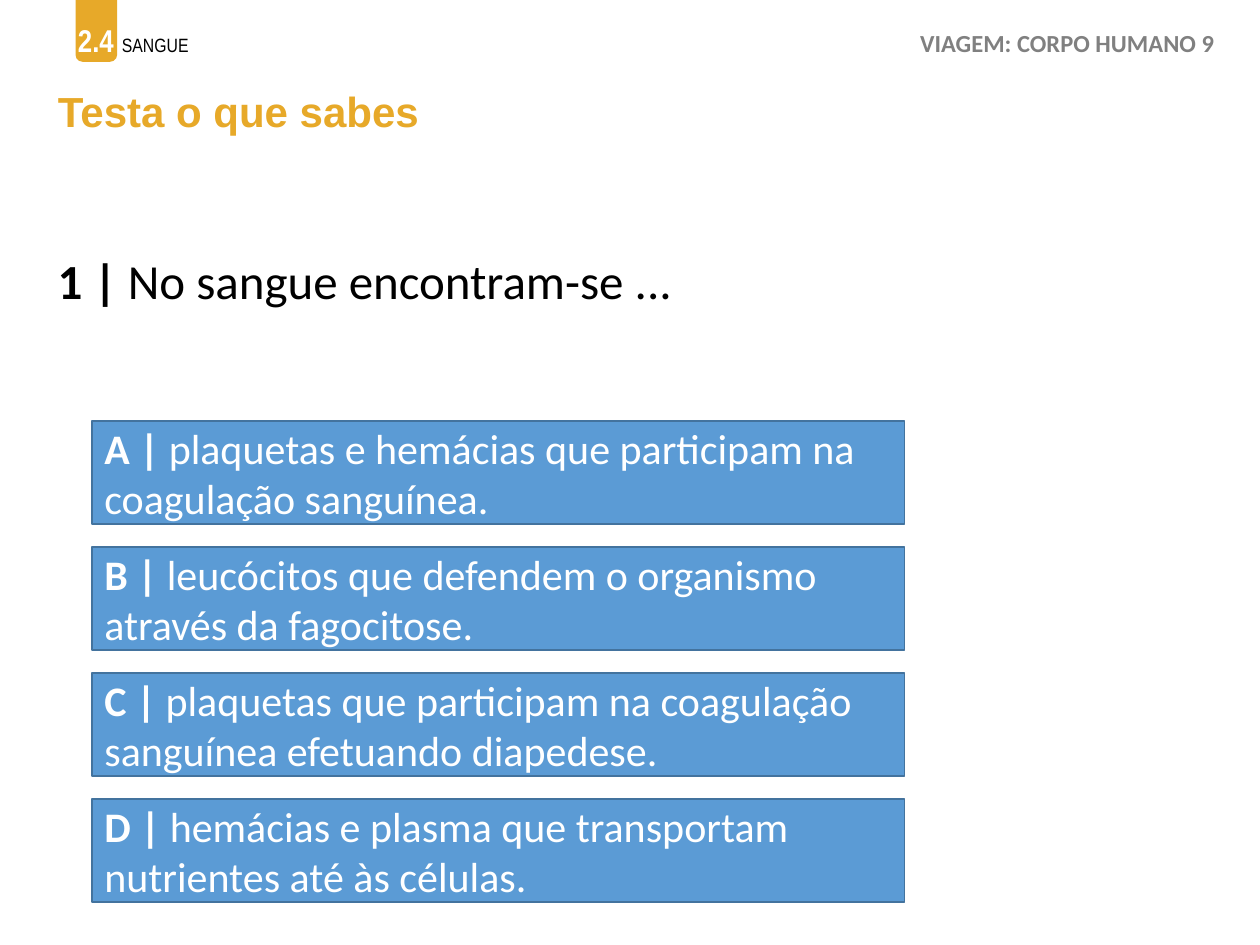
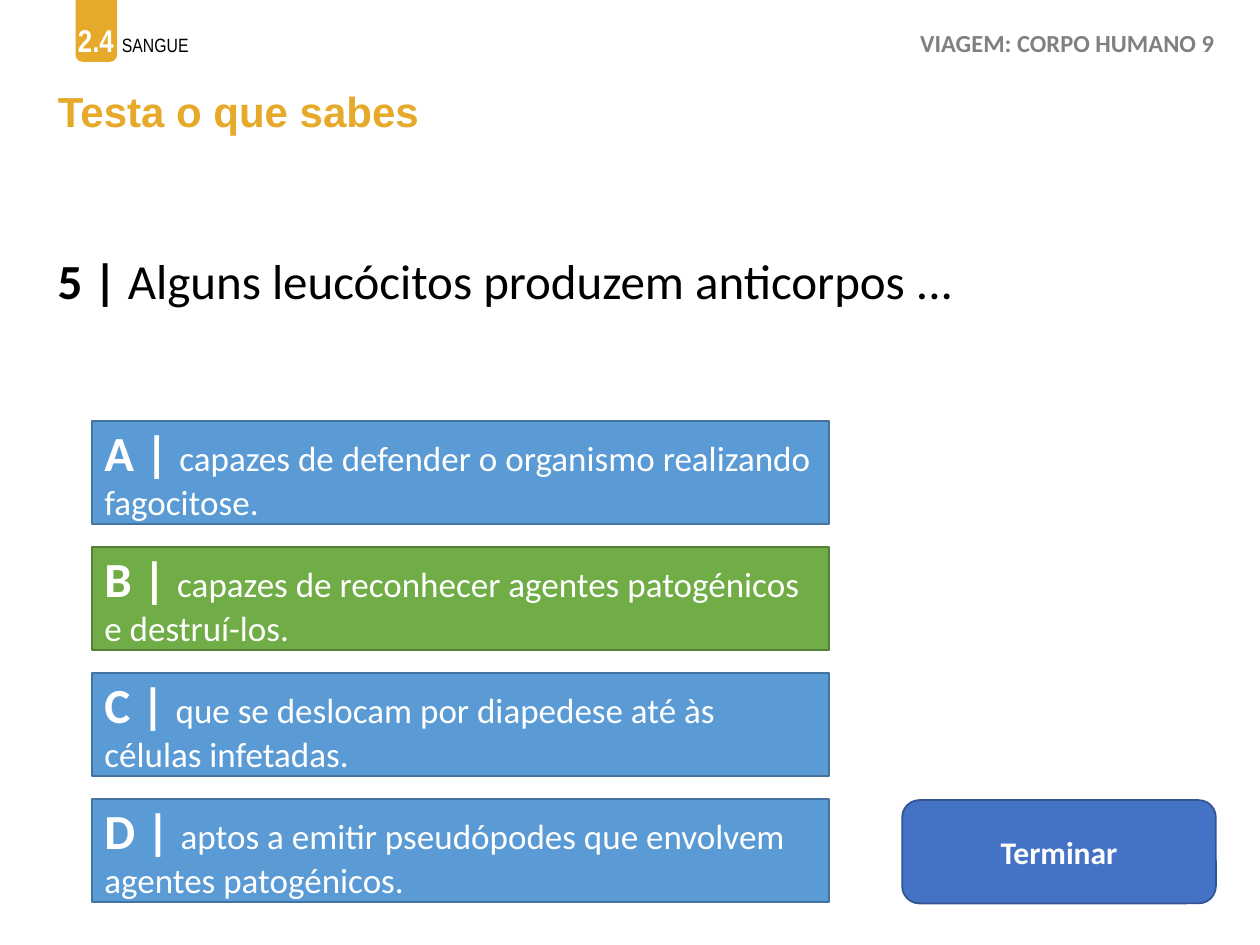
"""Builds two quiz slides about blood with a shared header and title style."""
from pptx import Presentation
from pptx.dml.color import RGBColor
from pptx.enum.shapes import MSO_SHAPE as Preset
from pptx.enum.text import MSO_ANCHOR as Anchor, MSO_AUTO_SIZE as AutoSize, PP_ALIGN as Align
from pptx.util import Inches, Pt

AMBER, GREY, BLACK, WHITE = "E7A929", "808080", "000000", "FFFFFF"
OPTION = {"fill": "5B9BD5", "line": "43739E"}
CORRECT = {"fill": "70AD47", "line": "538035"}
BUTTON = {"fill": "4472C4", "line": "325491"}

QUESTIONS = [
    {
        "number": "1",
        "question": "No sangue encontram-se ...",
        "answers": [
            "plaquetas e hemácias que participam na coagulação sanguínea.",
            "leucócitos que defendem o organismo através da fagocitose.",
            "plaquetas que participam na coagulação sanguínea efetuando diapedese.",
            "hemácias e plasma que transportam nutrientes até às células.",
        ],
        "width": 6.45,
        "sizes": (24, 24),
    },
    {
        "number": "5",
        "question": "Alguns leucócitos produzem anticorpos ...",
        "answers": [
            "capazes de defender o organismo realizando fagocitose.",
            "capazes de reconhecer agentes patogénicos e destruí-los.",
            "que se deslocam por diapedese até às células infetadas.",
            "aptos a emitir pseudópodes que envolvem agentes patogénicos.",
        ],
        "width": 5.85,
        "sizes": (28, 20),
        "correct": "B",
        "button": "Terminar",
    },
]


def rgb(value):
    return RGBColor.from_string(value)


def set_formats(target, formats):
    for name, value in formats.items():
        setattr(target, name, value)


def styled(text, size, color, bold=False, font="Calibri"):
    return text, color, {"size": Pt(size), "bold": bold, "name": font}


class QuizDeck:
    def __init__(self):
        self.deck = Presentation()
        set_formats(self.deck, {"slide_width": Inches(10), "slide_height": Inches(7.5)})
        self.slide = None

    def fill_text(self, frame, parts, align=Align.LEFT, **frame_formats):
        set_formats(frame, {"word_wrap": True, **frame_formats})
        paragraph = frame.paragraphs[0]
        paragraph.alignment = align
        for text, color, formats in parts:
            part = paragraph.add_run()
            part.text = text
            set_formats(part.font, formats)
            part.font.color.rgb = rgb(color)

    def label(self, box, parts, align=Align.LEFT):
        label = self.slide.shapes.add_textbox(*map(Inches, box))
        self.fill_text(label.text_frame, parts, align, auto_size=AutoSize.SHAPE_TO_FIT_TEXT)

    def block(self, box, fill, line=None, parts=(), preset=Preset.RECTANGLE, align=Align.LEFT):
        block = self.slide.shapes.add_shape(preset, *map(Inches, box))
        block.shadow.inherit = False
        block.fill.solid()
        block.fill.fore_color.rgb = rgb(fill)
        if line:
            block.line.color.rgb = rgb(line)
            block.line.width = Pt(1)
        else:
            block.line.fill.background()
        self.fill_text(block.text_frame, parts, align, vertical_anchor=Anchor.MIDDLE)

    def title(self, text):
        title = self.slide.shapes.title
        set_formats(title, {"left": Inches(0.36), "top": Inches(0.57),
                            "width": Inches(9.29), "height": Inches(0.62)})
        self.fill_text(title.text_frame, [styled(text, 24, AMBER, True, "Arial")],
                       vertical_anchor=Anchor.MIDDLE)

    def header(self):
        self.block((0.6, -0.13, 0.33, 0.62), AMBER, preset=Preset.ROUNDED_RECTANGLE)
        self.label((0.52, 0.09, 7.15, 0.44), [
            styled("2.4", 18, WHITE, True, "Arial Narrow"),
            styled(" ", 20, WHITE, True, "Arial Narrow"),
            styled("SANGUE", 11, BLACK, False, "Arial Narrow"),
        ])
        self.label((7.18, 0.17, 2.58, 0.34),
                   [styled("VIAGEM: CORPO HUMANO 9", 14, GREY, True)], Align.CENTER)

    def question_slide(self, number, question, answers, width, sizes, correct=None, button=None):
        self.slide = self.deck.slides.add_slide(self.deck.slide_layouts.get_by_name("Title Only"))
        self.header()
        self.title("Testa o que sabes")
        self.label((0.36, 1.94, 9.5, 0.57),
                   [styled(f"{number} | ", 28, BLACK, True), styled(question, 28, BLACK)])
        letter_size, answer_size = sizes
        for row, (letter, answer) in enumerate(zip("ABCD", answers)):
            colors = CORRECT if letter == correct else OPTION
            self.block((0.73, 3.34 + row, width, 0.82), **colors, parts=[
                styled(f"{letter} | ", letter_size, WHITE, True),
                styled(answer, answer_size, WHITE),
            ])
        if button:
            self.block((7.16, 6.35, 2.49, 0.82), **BUTTON,
                       parts=[styled(button, 18, WHITE, True)],
                       preset=Preset.ROUNDED_RECTANGLE, align=Align.CENTER)


def main():
    quiz = QuizDeck()
    for content in QUESTIONS:
        quiz.question_slide(**content)
    quiz.deck.save("out.pptx")


if __name__ == "__main__":
    main()
